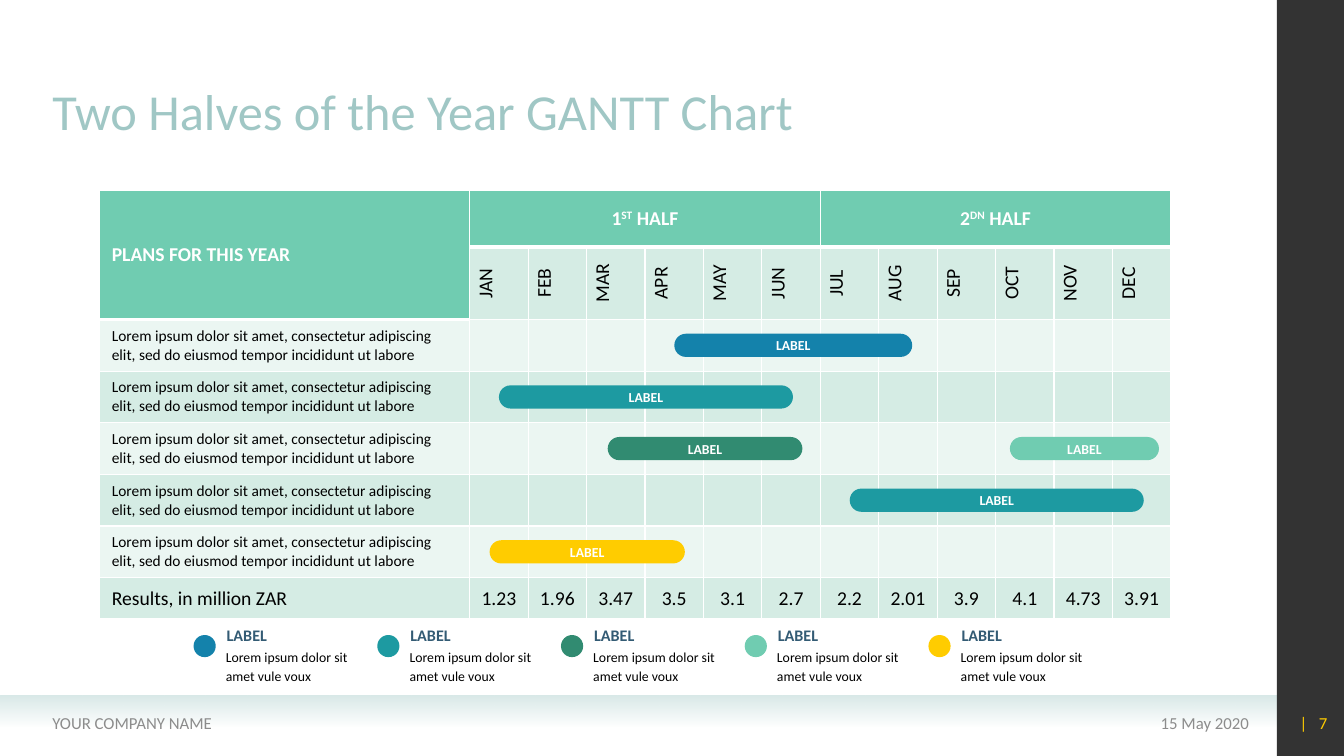
import lxml.etree
import pptx
import pptx.util
import pptx.dml.color
import pptx.enum.shapes
import pptx.enum.text
import pptx.oxml.ns

Pt = pptx.util.Pt
Inch = pptx.util.Inches
qn = pptx.oxml.ns.qn
Shape = pptx.enum.shapes.MSO_SHAPE
Align = pptx.enum.text.PP_ALIGN
Mid = pptx.enum.text.MSO_ANCHOR.MIDDLE
Low = pptx.enum.text.MSO_ANCHOR.BOTTOM

theme = {
    "font": "Calibri",
    "title": (36, "A0C7C5", False),
    "foot": (12, "8C8C8C", False),
    "page": (12, "FFCC00", False),
    "head": (14, "FFFFFF", True),
    "cell": (14, "000000", False),
    "plan": (11, "000000", False),
    "name": (11.5, "335B74", True),
    "note": (9.8, "000000", False),
    "bar": (9.8, "FFFFFF", True),
    "keys": ["1482AB", "1D9AA1", "318B71", "70CCB1", "FFCC00"],
    "top": "70CCB1", "bands": ["EBF6F2", "D5ECE4"],
    "fade": "D9E9E8", "side": "000000", "rule": "FFFFFF",
}
tint = pptx.dml.color.RGBColor.from_string

deck = pptx.Presentation()
deck.slide_width, deck.slide_height = Inch(13.33), Inch(7.5)
wide, high = deck.slide_width / 100, deck.slide_height / 100
slide = deck.slides.add_slide(deck.slide_layouts[5])
shapes = slide.shapes


def place(x, y, w, h):
    return int(x * wide), int(y * high), int(w * wide), int(h * high)


def write(host, text, look, line, box):
    frame = host.text_frame
    size, color, bold = theme[look]
    hold = host if hasattr(host, "vertical_anchor") else frame
    para = frame.paragraphs[0]
    for item, vals in ((hold, box), (para, line)):
        for key, val in vals.items():
            setattr(item, key, val)
    for i, part in enumerate(text.split("^")):
        run = para.add_run()
        run.text = part
        face = {"name": theme["font"], "size": Pt(size), "bold": bold}
        for key, val in face.items():
            setattr(run.font, key, val)
        run.font.color.rgb = tint(color)
        if i % 2:
            run.font._element.set("baseline", "30000")


fade = shapes.add_shape(Shape.RECTANGLE, *place(0, 92, 95, 4.13))
fade.fill.gradient()
fade.fill.gradient_angle = 270
for stop in fade.fill.gradient_stops:
    stop.color.rgb = tint(theme["fade"])
side = shapes.add_shape(Shape.RECTANGLE, *place(95, 0, 5, 100))
side.fill.solid()
side.fill.fore_color.rgb = tint(theme["side"])
for panel, alpha in ((fade, 0), (side, 80000)):
    panel.shadow.inherit = False
    panel.line.fill.background()
    last = panel._element.spPr.findall(".//" + qn("a:srgbClr"))[-1]
    lxml.etree.SubElement(last, qn("a:alpha")).set("val", str(alpha))

foots = [
    (68.25, 25.43, "15 May 2020", "foot", Align.RIGHT),
    (3.15, 36.75, "YOUR COMPANY NAME", "foot", Align.LEFT),
    (94.5, 5, "|   7", "page", Align.RIGHT),
]
for x, w, text, look, side in foots:
    area = shapes.add_textbox(*place(x, 92.93, w, 5.33))
    write(area, text, look, {"alignment": side}, {"word_wrap": True, "vertical_anchor": Mid})

title = shapes.title
title.left, title.top, title.width, title.height = place(3.15, 2.67, 84.08, 16.67)
write(title, "Two Halves of the Year GANTT Chart", "title",
      {"alignment": Align.LEFT, "line_spacing": 0.9}, {"vertical_anchor": Low})

left, top = 7.42, 25.2
cols = [27.53] + [4.35] * 12
rows = [7.47, 9.6] + [6.83] * 5 + [5.47]
months = "JAN FEB MAR APR MAY JUN JUL AUG SEP OCT NOV DEC".split()
sums = "1.23 1.96 3.47 3.5 3.1 2.7 2.2 2.01 3.9 4.1 4.73 3.91".split()
plan = ("Lorem ipsum dolor sit amet, consectetur adipiscing elit, "
        "sed do eiusmod tempor incididunt ut labore")
halves = {0: "PLANS FOR THIS YEAR", 1: "1^ST^ HALF", 7: "2^DN^ HALF"}
grid = [[halves.get(c, "") for c in range(13)], [""] + months]
grid += [[plan] + [""] * 12] * 5 + [["Results, in million ZAR"] + sums]

table = shapes.add_table(len(rows), len(cols), *place(left, top, sum(cols), sum(rows))).table
table.horz_banding = table.first_row = False
for c, w in enumerate(cols):
    table.columns[c].width = int(w * wide)
for r, h in enumerate(rows):
    table.rows[r].height = int(h * high)
for a, b in (((0, 0), (1, 0)), ((0, 1), (0, 6)), ((0, 7), (0, 12))):
    table.cell(*a).merge(table.cell(*b))

heavy = [(0, c) for c in range(13)] + [(1, 0)]
for r, texts in enumerate(grid):
    for c, text in enumerate(texts):
        cell = table.cell(r, c)
        cell.fill.solid()
        cell.fill.fore_color.rgb = tint(theme["top"] if (r, c) in heavy else theme["bands"][r % 2])
        prop = cell._tc.get_or_add_tcPr()
        thick = {"L": 1, "R": 1, "T": 3 if (r - 1, c) in heavy else 1,
                 "B": 3 if (r, c) in heavy else 1}
        for i, (edge, size) in enumerate(thick.items()):
            rule = lxml.etree.Element(qn("a:ln" + edge), w=str(Pt(size)))
            solid = lxml.etree.SubElement(rule, qn("a:solidFill"))
            lxml.etree.SubElement(solid, qn("a:srgbClr"), val=theme["rule"])
            prop.insert(i, rule)
        if not text:
            continue
        pad = Inch(0.05 if r == 7 and c else 0.12)
        look = "head" if r == 0 else "plan" if 1 < r < 7 else "cell"
        write(cell, text, look, {"alignment": Align.CENTER if c else Align.LEFT},
              {"vertical_anchor": Mid, "margin_left": pad, "margin_right": pad,
               "margin_top": Inch(0.04), "margin_bottom": Inch(0.04)})
        if r == 1:
            prop.set("vert", "vert270")

for i, color in enumerate(theme["keys"]):
    x = 14.4 + i * 13.67
    dot = shapes.add_shape(Shape.OVAL, *place(x, 84, 1.65, 2.93))
    dot.shadow.inherit = False
    dot.fill.solid()
    dot.fill.fore_color.rgb = tint(color)
    dot.line.fill.background()
    name = shapes.add_textbox(*place(x + 1.73, 82.13, 5.18, 3.87))
    write(name, "LABEL", "name", {}, {"word_wrap": False, "vertical_anchor": Mid})
    note = shapes.add_textbox(*place(x + 2.1, 85.33, 9.75, 5.2))
    write(note, "Lorem ipsum dolor sit amet vule voux", "note",
          {"line_spacing": Pt(13.3), "space_before": Pt(2)},
          {"word_wrap": True, "margin_left": Inch(0.04), "margin_right": Inch(0.04),
           "margin_top": Inch(0.02), "margin_bottom": Inch(0.02)})

bars = [(0, 3.5, 4.07, 0), (1, 0.5, 5.03, 1), (2, 2.36, 3.33, 2),
        (2, 9.24, 2.55, 3), (3, 6.5, 5.03, 1), (4, 0.34, 3.34, 4)]
for r, start, span, key in bars:
    x = left + cols[0] + start * cols[1]
    y = top + sum(rows[:2 + r]) + 1.87
    bar = shapes.add_shape(Shape.ROUNDED_RECTANGLE, *place(x, y, span * cols[1], 3.07))
    bar.adjustments[0] = 0.5
    bar.shadow.inherit = False
    bar.fill.solid()
    bar.fill.fore_color.rgb = tint(theme["keys"][key])
    bar.line.fill.background()
    write(bar, "LABEL", "bar", {"alignment": Align.CENTER},
          {"vertical_anchor": Mid, "margin_top": 0, "margin_bottom": 0})

deck.save("out.pptx")
